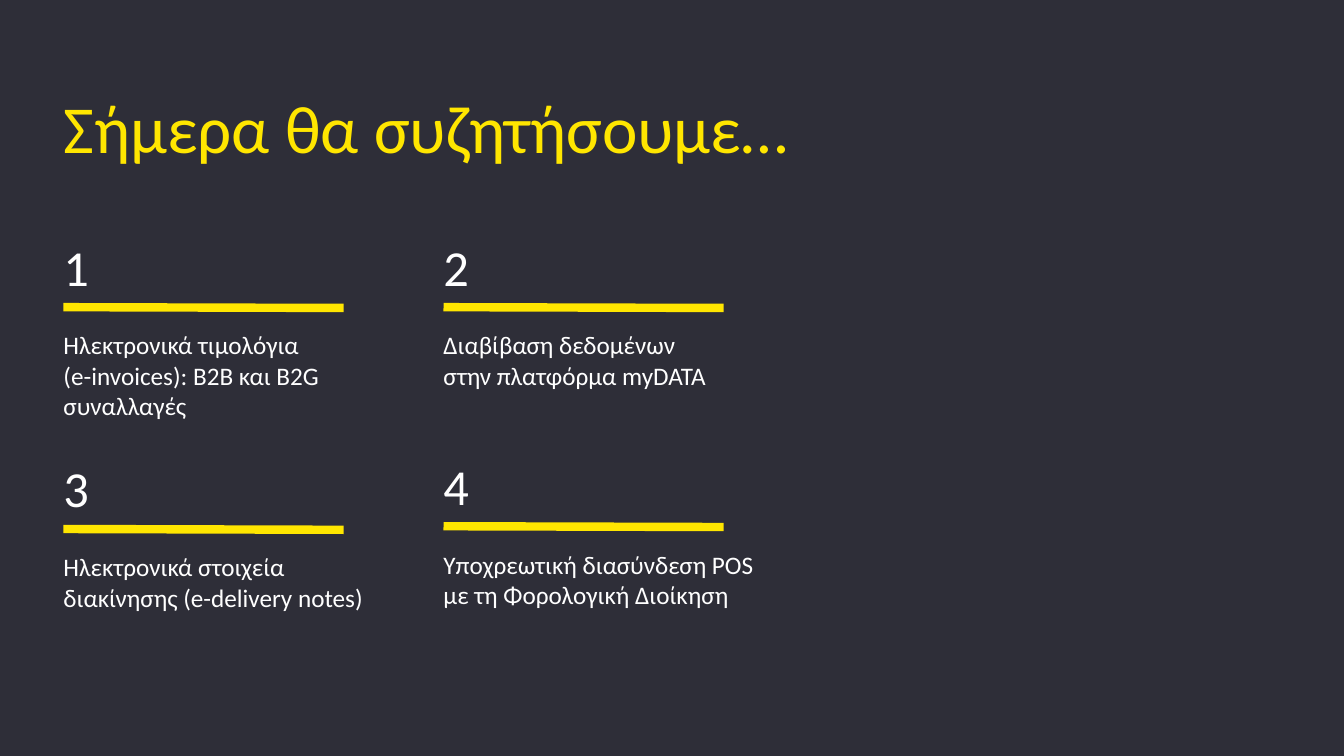
from lxml import etree
from pptx import Presentation
from pptx.dml.color import RGBColor
from pptx.enum.shapes import MSO_CONNECTOR
from pptx.enum.text import MSO_ANCHOR, MSO_AUTO_SIZE, PP_ALIGN
from pptx.oxml.ns import qn
from pptx.util import Cm, Pt

# Content
TITLE = "Σήμερα θα συζητήσουμε…"
# number, lines of text, left, top, box width, box height (cm)
TOPICS = [
    ("1", ["Ηλεκτρονικά τιμολόγια", "(e-invoices): B2B και B2G συναλλαγές"], 1.6, 5.94, 7.06, 4.7),
    ("2", ["Διαβίβαση δεδομένων", "στην πλατφόρμα myDATA"], 11.18, 5.94, 7.06, 4.7),
    ("3", ["Ηλεκτρονικά στοιχεία", "διακίνησης (e-delivery notes)"], 1.6, 11.53, 8.61, 3.94),
    ("4", ["Υποχρεωτική διασύνδεση POS με τη Φορολογική Διοίκηση"], 11.18, 11.46, 8.03, 4.7),
]

# Style
DARK = RGBColor(0x2E, 0x2E, 0x38)
YELLOW = RGBColor(0xFF, 0xE6, 0x00)
WHITE = RGBColor(0xFF, 0xFF, 0xFF)
FONT = "Calibri"
RULE_OFFSET, RULE_WIDTH, RULE_DROP = 1.8, 7.06, 0.02


def setup_frame(tf):
    tf.word_wrap = True
    tf.auto_size = MSO_AUTO_SIZE.NONE
    tf.vertical_anchor = MSO_ANCHOR.TOP
    tf.margin_left = tf.margin_top = tf.margin_right = tf.margin_bottom = 0


def write(p, lines, size, color, space_after):
    p.alignment = PP_ALIGN.LEFT
    p.space_after = Pt(space_after)
    for i, line in enumerate(lines):
        if i:
            p.add_line_break()
        r = p.add_run()
        r.text = line
        r.font.name = FONT
        r.font.size = Pt(size)
        r.font.color.rgb = color


def add_topic(slide, number, lines, left, top, width, height):
    tf = slide.shapes.add_textbox(Cm(left), Cm(top), Cm(width), Cm(height)).text_frame
    setup_frame(tf)
    write(tf.paragraphs[0], [number], 36, WHITE, 24)
    write(tf.add_paragraph(), lines, 18, WHITE, 6)

    # Rule between number and text
    y = top + RULE_OFFSET
    rule = slide.shapes.add_connector(MSO_CONNECTOR.STRAIGHT, Cm(left), Cm(y),
                                      Cm(left + RULE_WIDTH), Cm(y + RULE_DROP))
    rule.line.color.rgb = YELLOW
    rule.line.width = Pt(6)
    etree.SubElement(rule._element.spPr, qn("a:effectLst"))


def main():
    prs = Presentation()
    prs.slide_width, prs.slide_height = Cm(33.88), Cm(19.05)
    slide = prs.slides.add_slide(prs.slide_layouts[5])
    slide.background.fill.solid()
    slide.background.fill.fore_color.rgb = DARK

    # Title
    title = slide.shapes.title
    title.left, title.top, title.width, title.height = Cm(1.6), Cm(2.18), Cm(26.19), Cm(2.06)
    setup_frame(title.text_frame)
    write(title.text_frame.paragraphs[0], [TITLE], 48, YELLOW, 6)

    # Topics
    for topic in TOPICS:
        add_topic(slide, *topic)

    prs.save("out.pptx")


if __name__ == "__main__":
    main()
